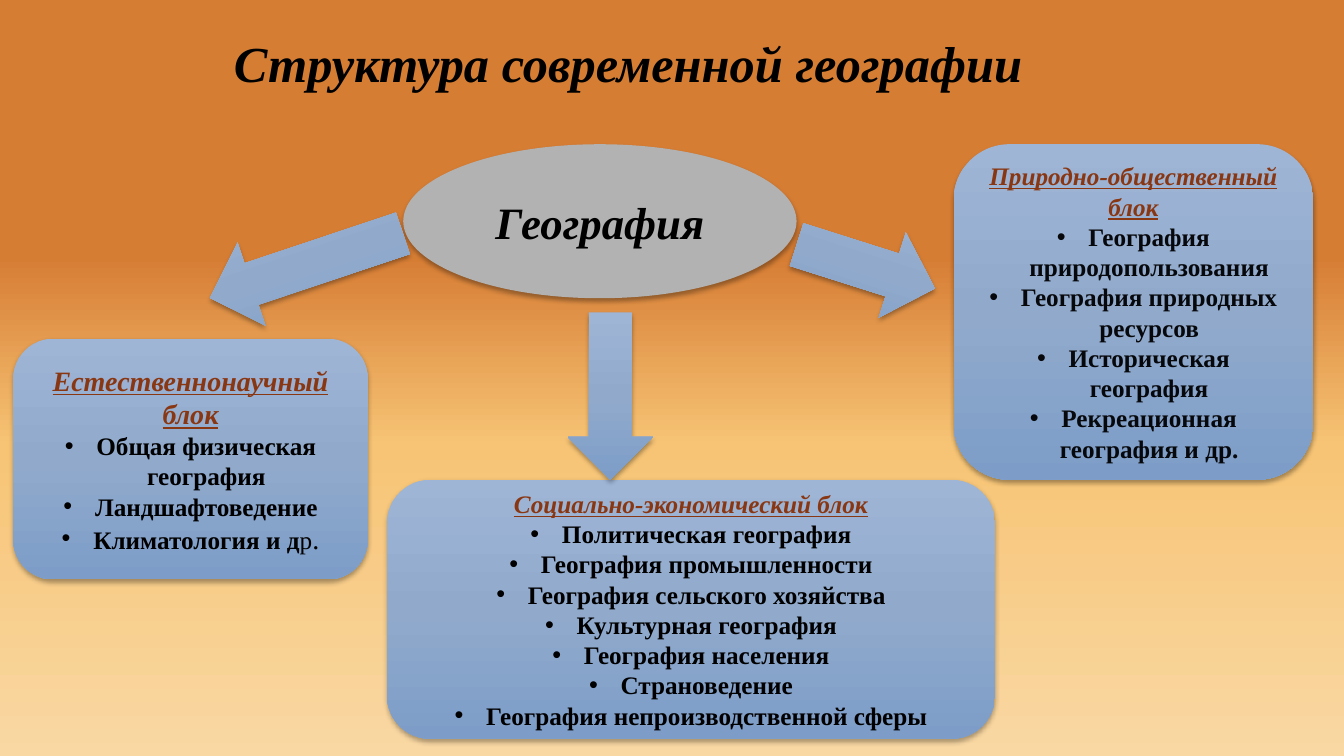
from pptx import Presentation
from pptx.dml.color import RGBColor
from pptx.enum.shapes import MSO_SHAPE
from pptx.enum.text import MSO_ANCHOR, PP_ALIGN
from pptx.oxml.ns import qn
from pptx.util import Pt
from lxml.etree import SubElement

FONT = "Times New Roman"
BLACK = RGBColor(0x00, 0x00, 0x00)
NEAR_BLACK = RGBColor(0x07, 0x08, 0x0B)
BROWN = RGBColor(0x89, 0x37, 0x13)
GRAY = RGBColor(0xB2, 0xB2, 0xB2)
SUNSET = [
    (34, RGBColor(0xD6, 0x7D, 0x34)),
    (59, RGBColor(0xF7, 0xC4, 0x75)),
    (100, RGBColor(0xF9, 0xD8, 0xA3)),
]
BLUES = [
    (0, RGBColor(0x9E, 0xB5, 0xD6)),
    (50, RGBColor(0x91, 0xAA, 0xCC)),
    (100, RGBColor(0x7D, 0x9D, 0xC8)),
]
BULLET_INDENT = Pt(22.5)


def paint_gradient(fill, holder, stops):
    fill.gradient()
    fill.gradient_angle = 270
    stop_list = holder.find(".//" + qn("a:gsLst"))
    for stop in list(stop_list):
        stop_list.remove(stop)
    for percent, color in stops:
        stop = SubElement(stop_list, qn("a:gs"), pos=str(percent * 1000))
        SubElement(stop, qn("a:srgbClr"), val=str(color))


def add_shadow(shape):
    shape.shadow.inherit = False
    effects = shape.element.spPr.find(qn("a:effectLst"))
    shadow = SubElement(
        effects, qn("a:outerShdw"), blurRad=str(Pt(3.5)), dist=str(Pt(2.2)),
        dir="5400000", rotWithShape="0",
    )
    color = SubElement(shadow, qn("a:srgbClr"), val=str(BLACK))
    SubElement(color, qn("a:alpha"), val="32000")


def add_figure(page, kind, bounds, color=None, rotation=0):
    shape = page.shapes.add_shape(kind, *map(Pt, bounds))
    shape.rotation = rotation
    if color is None:
        paint_gradient(shape.fill, shape.element, BLUES)
    else:
        shape.fill.solid()
        shape.fill.fore_color.rgb = color
    shape.line.fill.background()
    add_shadow(shape)
    frame = shape.text_frame
    frame.word_wrap = True
    frame.vertical_anchor = MSO_ANCHOR.MIDDLE
    frame.paragraphs[0].alignment = PP_ALIGN.CENTER
    return shape


def add_span(para, text, *, size=18, color=BLACK, bold=True, italic=False, underline=False):
    span = para.add_run()
    span.text = text
    font = span.font
    font.name = FONT
    font.size = Pt(size)
    font.color.rgb = color
    font.bold = bold
    font.italic = italic
    font.underline = underline


def add_bullet(frame):
    para = frame.add_paragraph()
    para.alignment = PP_ALIGN.CENTER
    properties = para._p.get_or_add_pPr()
    properties.set("marL", str(BULLET_INDENT))
    properties.set("indent", str(-BULLET_INDENT))
    SubElement(properties, qn("a:buFont"), typeface="Arial")
    SubElement(properties, qn("a:buChar"), char="•")
    return para


def add_block(page, bounds, heading, items, heading_size=18, color=BLACK):
    frame = add_figure(page, MSO_SHAPE.ROUNDED_RECTANGLE, bounds).text_frame
    add_span(frame.paragraphs[0], heading, size=heading_size, color=BROWN,
             italic=True, underline=True)
    for item in items:
        add_span(add_bullet(frame), item, color=color)
    return frame


def add_title(page, text):
    box = page.shapes.add_textbox(Pt(54), Pt(18), Pt(831.6), Pt(59))
    frame = box.text_frame
    frame.word_wrap = True
    frame.vertical_anchor = MSO_ANCHOR.MIDDLE
    para = frame.paragraphs[0]
    para.line_spacing = 0.9
    para._p.get_or_add_pPr().set("marL", str(Pt(106)))
    add_span(para, text, size=36, italic=True)


def main():
    deck = Presentation()
    deck.slide_width, deck.slide_height = Pt(960), Pt(540)
    page = deck.slides.add_slide(deck.slide_layouts[6])
    paint_gradient(page.background.fill, page.element, SUNSET)

    add_title(page, "Структура современной географии")
    hub = add_figure(page, MSO_SHAPE.OVAL, (288, 103, 281, 110), GRAY)
    add_span(hub.text_frame.paragraphs[0], "География", size=32, italic=True)

    science = add_block(
        page, (9.4, 241.9, 253.4, 172), "Естественнонаучный блок",
        ["Общая физическая география", "Ландшафтоведение"], heading_size=20,
    )
    climate = add_bullet(science)
    add_span(climate, "Климатология и д")
    add_span(climate, "р", bold=False)
    add_span(climate, ".", size=20, bold=False)

    add_block(
        page, (276.5, 342.7, 434.2, 185), "Социально-экономический блок",
        ["Политическая география", "География промышленности",
         "География сельского хозяйства", "Культурная география",
         "География населения", "Страноведение",
         "География непроизводственной сферы"],
    )
    add_block(
        page, (681.1, 103, 257, 239.7), "Природно-общественный блок",
        ["География природопользования", "География природных ресурсов",
         "Историческая география", "Рекреационная география и др."],
        color=NEAR_BLACK,
    )

    add_figure(page, MSO_SHAPE.DOWN_ARROW, (405.4, 223.2, 61.2, 119.5))
    add_figure(page, MSO_SHAPE.RIGHT_ARROW, (566.6, 158.4, 103.7, 64), rotation=17.6)
    add_figure(page, MSO_SHAPE.LEFT_ARROW, (146.2, 158.4, 145.4, 62.6), rotation=341.5)

    deck.save("out.pptx")


if __name__ == "__main__":
    main()
